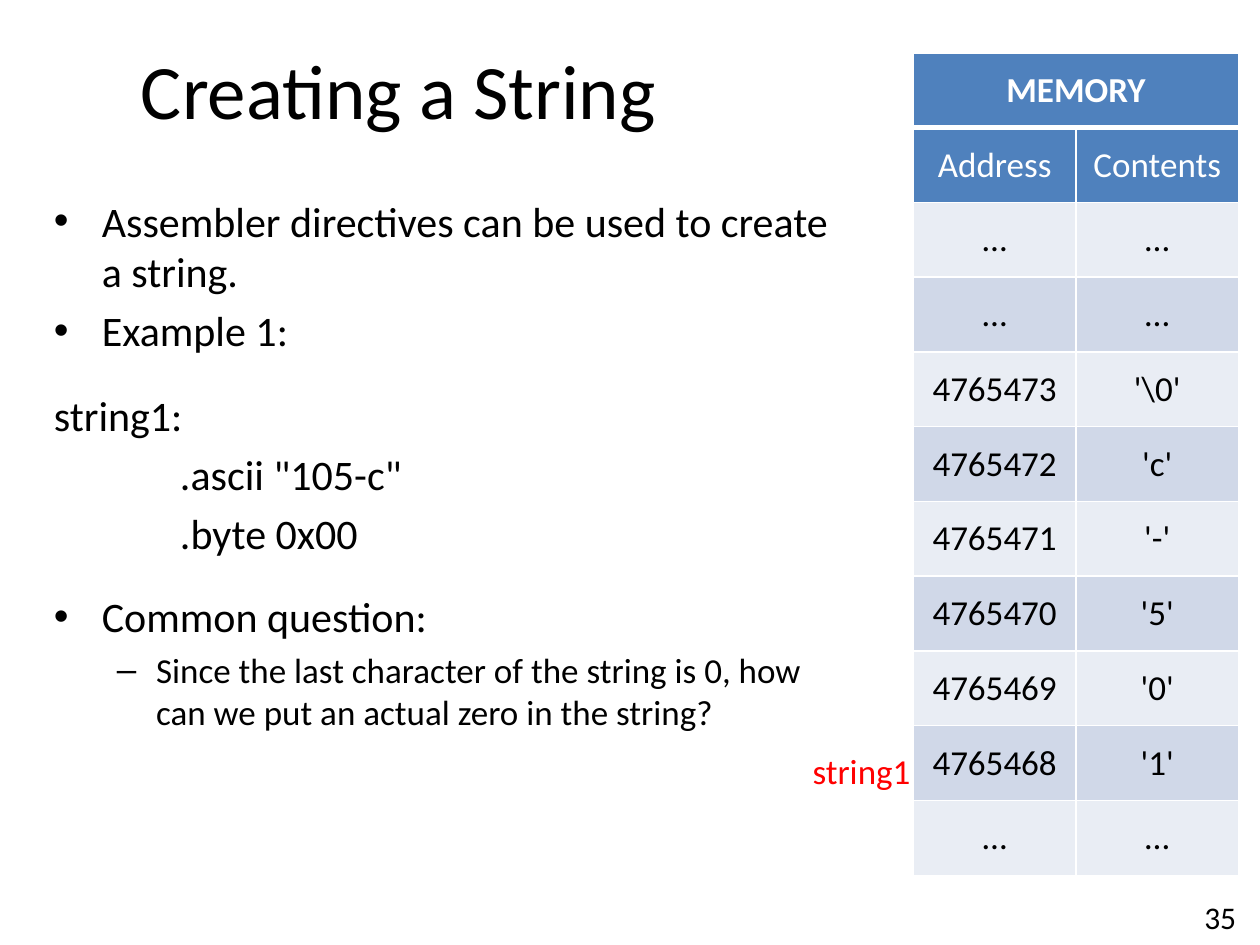
from lxml import etree
from pptx import Presentation
from pptx.dml.color import RGBColor
from pptx.enum.text import MSO_ANCHOR, PP_ALIGN
from pptx.oxml.ns import qn
from pptx.util import Inches, Pt

LEFT, CENTER, RIGHT = PP_ALIGN.LEFT, PP_ALIGN.CENTER, PP_ALIGN.RIGHT
TOP, MIDDLE = MSO_ANCHOR.TOP, MSO_ANCHOR.MIDDLE
FONT = "Calibri"
COLORS = {
    "text": "000000",
    "white": "FFFFFF",
    "header": "4F81BD",
    "light_row": "E9EDF4",
    "dark_row": "D0D8E8",
    "label": "FF0000",
}


def write(para, text, size=20, color="text", bold=False, align=LEFT,
          before=0, margin=0, hanging=0, bullet=None):
    """Fill a paragraph with one formatted run; margins are in inches."""
    para.alignment = align
    para.space_before = Pt(before)
    props = para._p.get_or_add_pPr()
    props.set("marL", str(Inches(margin)))
    props.set("indent", str(-Inches(hanging)))
    if bullet:
        etree.SubElement(props, qn("a:buFont")).set("typeface", "Arial")
        etree.SubElement(props, qn("a:buChar")).set("char", bullet)
    span = para.add_run()
    span.text = text
    span.font.name = FONT
    span.font.size = Pt(size)
    span.font.bold = bold
    span.font.color.rgb = RGBColor.from_string(COLORS[color])


def add_box(page, left, top, width, height, anchor=TOP, wrap=True):
    """Add an empty text box, measured in inches, and return its frame."""
    box = page.shapes.add_textbox(Inches(left), Inches(top), Inches(width), Inches(height))
    box.text_frame.word_wrap = wrap
    box.text_frame.vertical_anchor = anchor
    return box.text_frame


deck = Presentation()
deck.slide_width, deck.slide_height = Inches(10), Inches(7.5)
page = deck.slides.add_slide(deck.slide_layouts[6])

# Title
title = add_box(page, 0.5, 0.08, 5.33, 1.25, anchor=MIDDLE)
write(title.paragraphs[0], "Creating a String", size=44, align=CENTER)

# Body text: larger space before sets the code example apart
point = {"size": 24, "margin": 0.38, "hanging": 0.38, "bullet": "•"}
subpoint = {"size": 20, "margin": 0.81, "hanging": 0.31, "bullet": "–"}
code = {"size": 24, "margin": 1}
body_lines = [
    ("Assembler directives can be used to create a string.", point, 4.8),
    ("Example 1:", point, 4.8),
    ("string1:", {"size": 24}, 20),
    ('.ascii "105-c"', code, 4.8),
    (".byte 0x00", code, 4.8),
    ("Common question:", point, 19),
    ("Since the last character of the string is 0, how can we put an actual zero "
     "in the string?", subpoint, 4),
]
body = add_box(page, 0.33, 1.5, 6.42, 5.5)
for index, (text, style, before) in enumerate(body_lines):
    para = body.add_paragraph() if index else body.paragraphs[0]
    write(para, text, before=before, **style)

# Slide number
number = add_box(page, 7.58, 7.08, 2.33, 0.4)
write(number.paragraphs[0], "35", size=18, align=RIGHT)

# Memory table: the string's bytes run upward from its first address
first_address = 4765468
stored = [(str(first_address + offset), f"'{char}'")
          for offset, char in enumerate(["1", "0", "5", "-", "c", "\\0"])]
gap = ("…", "…")
rows = [("MEMORY", ""), ("Address", "Contents"), gap, gap, *reversed(stored), gap]
memory = page.shapes.add_table(len(rows), 2, Inches(7.25), Inches(0.42),
                               Inches(2.58), Inches(6.53)).table
memory.cell(0, 0).merge(memory.cell(0, 1))
for row_index, values in enumerate(rows):
    is_header = row_index < 2
    if is_header:
        fill = "header"
    else:
        fill = "dark_row" if row_index % 2 else "light_row"
    for column_index, text in enumerate(values):
        cell = memory.cell(row_index, column_index)
        cell.vertical_anchor = MIDDLE
        # White rules, thicker under the heading
        props = cell._tc.get_or_add_tcPr()
        for side in ("lnL", "lnR", "lnT", "lnB"):
            thick = (row_index, side) in ((0, "lnB"), (1, "lnT"))
            line = etree.SubElement(props, qn(f"a:{side}"), w=str(Pt(3 if thick else 1)))
            solid = etree.SubElement(line, qn("a:solidFill"))
            etree.SubElement(solid, qn("a:srgbClr"), val=COLORS["white"])
        cell.fill.solid()
        cell.fill.fore_color.rgb = RGBColor.from_string(COLORS[fill])
        if text:
            write(cell.text_frame.paragraphs[0], text, align=CENTER,
                  color="white" if is_header else "text", bold=row_index == 0)

# Label beside the first byte of the string
label = add_box(page, 6.35, 5.9, 0.99, 0.44, wrap=False)
write(label.paragraphs[0], "string1", color="label")

deck.save("out.pptx")
